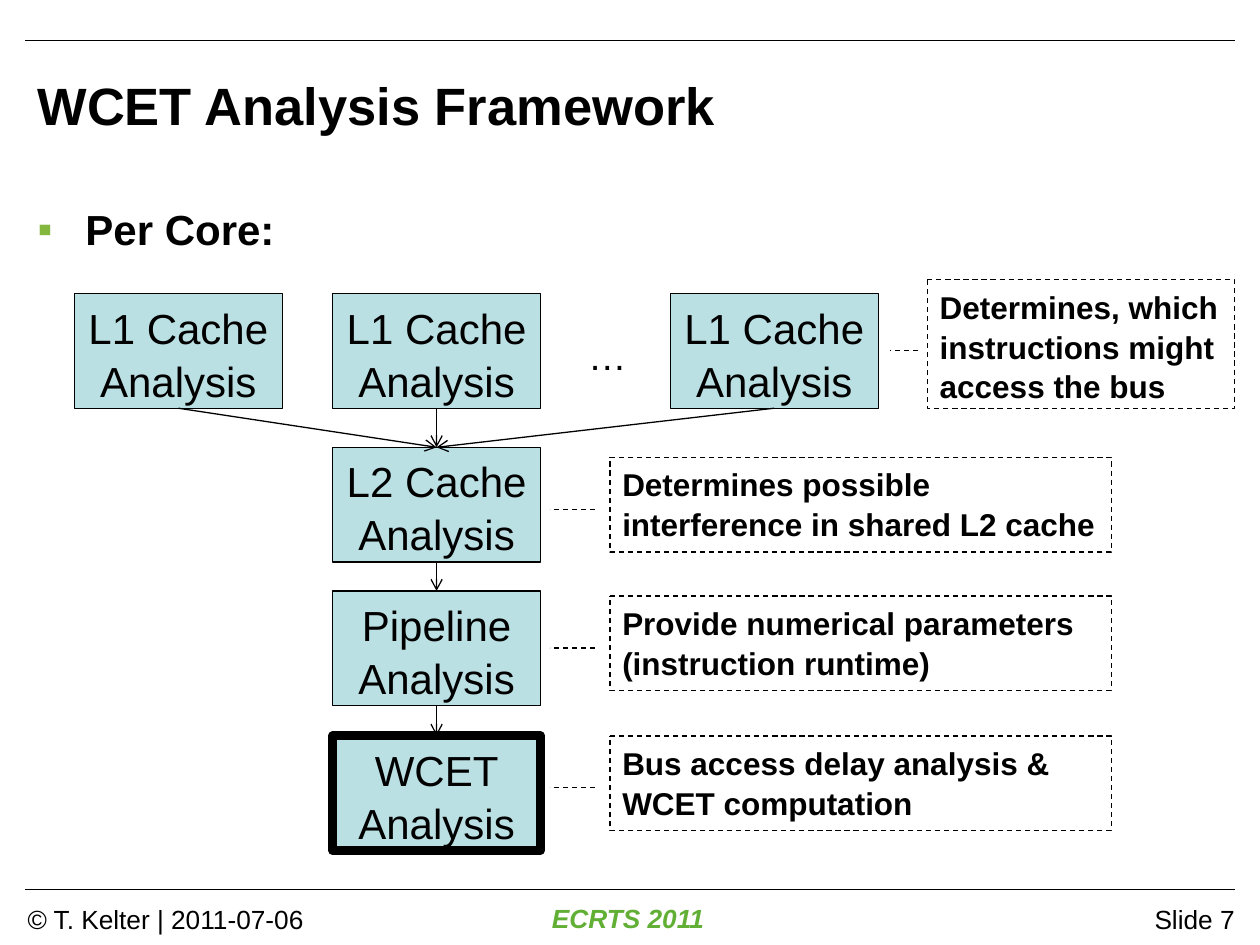
from typing import NamedTuple

from lxml import etree
from pptx import Presentation
from pptx.dml.color import RGBColor
from pptx.enum.dml import MSO_LINE as Dash
from pptx.enum.shapes import MSO_CONNECTOR as Wire, MSO_SHAPE as Kind
from pptx.enum.text import MSO_ANCHOR as Anchor, PP_ALIGN as Align
from pptx.oxml.ns import qn
from pptx.util import Inches, Pt

BLACK, GREEN, LIME, TEAL = "000000", "62AF35", "83B73D", "BBE0E3"
STEP_W, STEP_H = 1.65, 0.91
NOTE_W, NOTE_H = 3.98, 0.75
MID = 2.64
TOP = 2.33


class Step(NamedTuple):
    name: str
    x: float
    y: float
    line: float = 0.75

    @property
    def head(self) -> tuple[float, float]:
        return self.x + STEP_W / 2, self.y

    @property
    def foot(self) -> tuple[float, float]:
        return self.x + STEP_W / 2, self.y + STEP_H


class Note(NamedTuple):
    text: str
    x: float
    y: float
    w: float = NOTE_W
    h: float = NOTE_H


class Label(NamedTuple):
    text: str
    x: float
    y: float
    w: float
    h: float
    size: float = 15
    align: Align = Align.LEFT
    color: str = BLACK
    bold: bool = False
    italic: bool = False
    anchor: Anchor = Anchor.TOP
    right: float = 0.1
    wrap: bool = True


LEFT = Step("L1 Cache", 0.59, TOP)
NEXT = Step("L1 Cache", MID, TOP)
LAST = Step("L1 Cache", 5.32, TOP)
SHARED = Step("L2 Cache", MID, 3.55)
PIPE = Step("Pipeline", MID, 4.69)
WCET = Step("WCET", MID, 5.84, 5)

STEPS = [LEFT, NEXT, LAST, SHARED, PIPE, WCET]
LINKS = [(LEFT, SHARED), (NEXT, SHARED), (LAST, SHARED),
         (SHARED, PIPE), (PIPE, WCET)]
NOTES = [
    Note("Determines, which instructions might access the bus",
         7.36, 2.22, 2.44, 1.02),
    Note("Determines possible interference in shared L2 cache", 4.84, 3.63),
    Note("Provide numerical parameters (instruction runtime)", 4.84, 4.73),
    Note("Bus access delay analysis & WCET computation", 4.84, 5.84),
]
LABELS = [
    Label("© T. Kelter | 2011-07-06", 0.12, 7.11, 3.31, 0.5),
    Label("ECRTS 2011", 2.05, 7.1, 5.87, 0.5, align=Align.CENTER,
          color=GREEN, bold=True, italic=True),
    Label("Slide 7", 8.3, 7.11, 1.5, 0.5, align=Align.RIGHT, right=0),
    Label("WCET Analysis Framework", 0.2, 0.28, 9.61, 1.08, 30,
          bold=True, anchor=Anchor.MIDDLE),
    Label("…", 4.57, 2.57, 0.51, 0.47, 22, wrap=False),
]


def rgb(color: str) -> RGBColor:
    return RGBColor.from_string(color)


def write(para, text: str, size: float, align=Align.LEFT, color=BLACK,
          bold=False, italic=False) -> None:
    para.alignment = align
    para.line_spacing = 1.05
    run = para.add_run()
    run.text = text
    font = run.font
    font.name, font.size = "Arial", Pt(size)
    font.bold, font.italic = bold, italic
    font.color.rgb = rgb(color)


def add_label(slide, label: Label):
    box = slide.shapes.add_textbox(Inches(label.x), Inches(label.y),
                                   Inches(label.w), Inches(label.h))
    frame = box.text_frame
    frame.word_wrap = label.wrap
    frame.vertical_anchor = label.anchor
    frame.margin_right = Inches(label.right)
    para = frame.paragraphs[0]
    write(para, label.text, label.size, label.align, label.color,
          label.bold, label.italic)
    return para


def add_bullet(para, sign: str, color: str, indent: float) -> None:
    props = para._p.get_or_add_pPr()
    props.set("marL", str(Inches(indent)))
    props.set("indent", str(-Inches(indent)))
    tint = etree.SubElement(props, qn("a:buClr"))
    etree.SubElement(tint, qn("a:srgbClr"), val=color)
    etree.SubElement(props, qn("a:buFont"), typeface="Arial")
    etree.SubElement(props, qn("a:buChar"), char=sign)


def add_block(slide, kind: Kind, x: float, y: float, w: float, h: float,
              line: float):
    """Add an outlined shape with text starting at its top."""
    block = slide.shapes.add_shape(kind, Inches(x), Inches(y),
                                   Inches(w), Inches(h))
    block.shadow.inherit = False
    block.line.color.rgb = rgb(BLACK)
    block.line.width = Pt(line)
    block.text_frame.word_wrap = True
    block.text_frame.vertical_anchor = Anchor.TOP
    return block


def add_step(slide, step: Step) -> None:
    block = add_block(slide, Kind.RECTANGLE, step.x, step.y,
                      STEP_W, STEP_H, step.line)
    block.fill.solid()
    block.fill.fore_color.rgb = rgb(TEAL)
    frame = block.text_frame
    write(frame.paragraphs[0], step.name, 24, Align.CENTER)
    write(frame.add_paragraph(), "Analysis", 24, Align.CENTER)


def add_note(slide, note: Note) -> None:
    block = add_block(slide, Kind.LINE_CALLOUT_1, *note[1:], 0.75)
    block.fill.background()
    block.line.dash_style = Dash.DASH
    for spot, value in enumerate((0.55, -0.03, 0.55, -0.12)):
        block.adjustments[spot] = value
    write(block.text_frame.paragraphs[0], note.text, 18, bold=True)


def add_line(slide, start: tuple[float, float], end: tuple[float, float],
             width: float, arrow: bool = False) -> None:
    wire = slide.shapes.add_connector(
        Wire.STRAIGHT, *(Inches(v) for v in (*start, *end)))
    wire.line.color.rgb = rgb(BLACK)
    wire.line.width = Pt(width)
    if arrow:
        etree.SubElement(wire.line._get_or_add_ln(), qn("a:tailEnd"),
                         type="arrow")
    etree.SubElement(wire._element.spPr, qn("a:effectLst"))


def main() -> None:
    deck = Presentation()
    deck.slide_width, deck.slide_height = Inches(10), Inches(7.5)
    slide = deck.slides.add_slide(deck.slide_layouts[6])
    for y in (0.32, 7.06):
        add_line(slide, (0.2, y), (9.8, y), 0.5)
    for label in LABELS:
        add_label(slide, label)
    core = add_label(slide, Label("Per Core:", 0.2, 1.55, 9.61, 0.55, 24,
                                  bold=True))
    add_bullet(core, "▪", LIME, 0.38)
    for step in STEPS:
        add_step(slide, step)
    for start, end in LINKS:
        add_line(slide, start.foot, end.head, 0.75, arrow=True)
    for note in NOTES:
        add_note(slide, note)
    deck.save("out.pptx")


if __name__ == "__main__":
    main()
